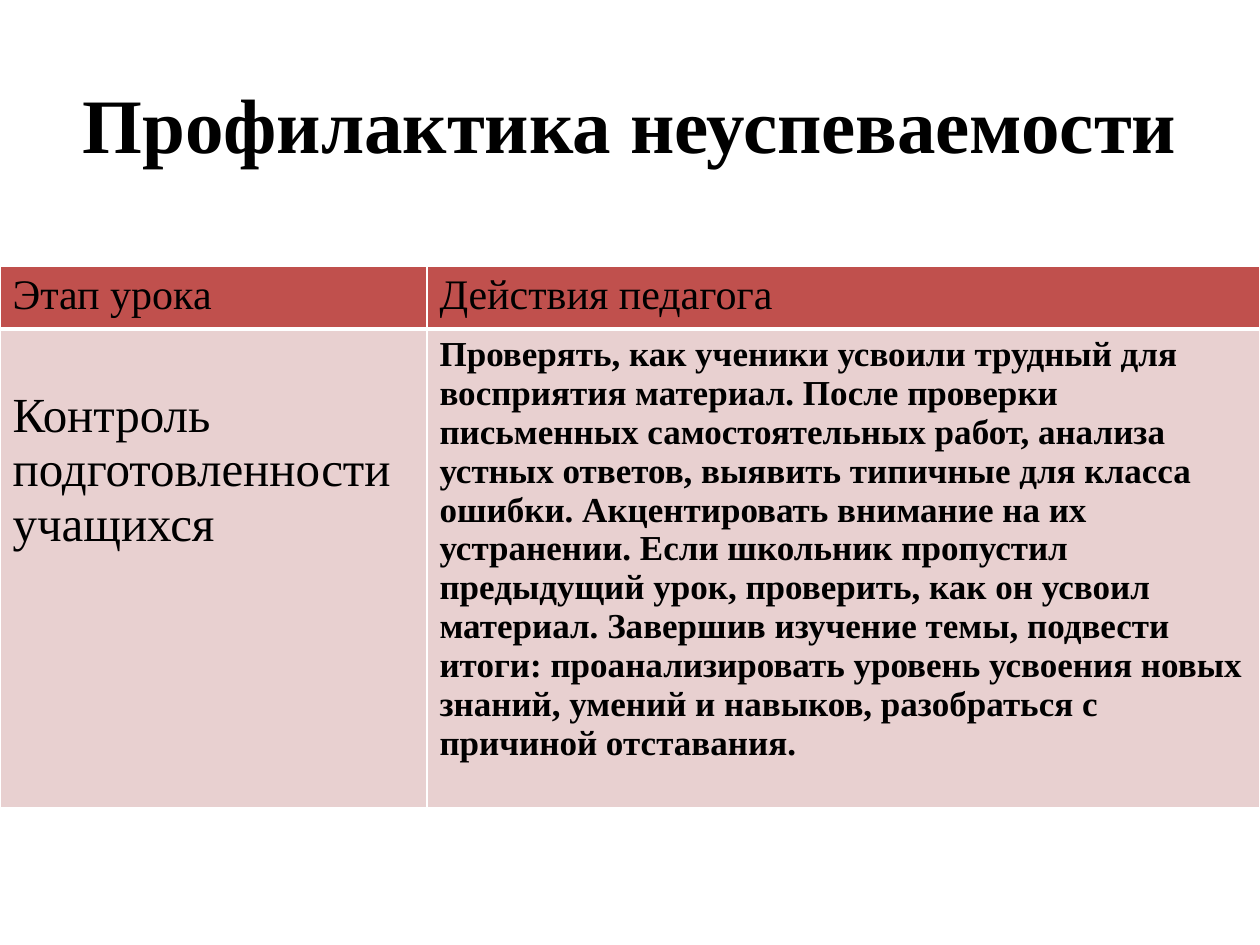
from lxml.etree import SubElement
from pptx import Presentation
from pptx.dml.color import RGBColor
from pptx.enum.text import MSO_ANCHOR, PP_ALIGN
from pptx.oxml.ns import qn
from pptx.util import Emu, Pt

FONT = "Times New Roman"
BLACK = RGBColor(0x00, 0x00, 0x00)
WHITE = RGBColor(0xFF, 0xFF, 0xFF)
RED = RGBColor(0xC0, 0x50, 0x4D)
PINK = RGBColor(0xE8, 0xD0, 0xD0)

HEADERS = ("Этап урока", "Действия педагога")
STAGE = "Контроль подготовленности учащихся"
ACTIONS = (
    "Проверять, как ученики усвоили трудный для восприятия материал. "
    "После проверки письменных самостоятельных работ, анализа устных ответов, "
    "выявить типичные для класса ошибки. Акцентировать внимание на их устранении. "
    "Если школьник пропустил предыдущий урок, проверить, как он усвоил материал. "
    "Завершив изучение темы, подвести итоги: проанализировать уровень усвоения "
    "новых знаний, умений и навыков, разобраться с причиной отставания."
)


def px(length):
    return Emu(round(length * 914400 / 126))


def add_run(paragraph, text, size, bold=False):
    run = paragraph.add_run()
    run.text = text
    run.font.name = FONT
    run.font.size = Pt(size)
    run.font.bold = bold
    run.font.color.rgb = BLACK


def set_borders(cell, bottom_width):
    """Draw white 1 pt borders, with a bottom border of the given width in points."""
    properties = cell._tc.get_or_add_tcPr()
    for side, width in (("L", 1), ("R", 1), ("T", 1), ("B", bottom_width)):
        line = SubElement(properties, qn(f"a:ln{side}"), w=str(Pt(width)))
        fill = SubElement(line, qn("a:solidFill"))
        SubElement(fill, qn("a:srgbClr"), val=str(WHITE))


def fill_cell(cell, text, size, color, bold=False, bottom_width=1):
    set_borders(cell, bottom_width)
    cell.fill.solid()
    cell.fill.fore_color.rgb = color
    add_run(cell.text_frame.paragraphs[0], text, size, bold)


def add_title(slide, left, top, width, height):
    shape = slide.shapes.add_textbox(px(left), px(top), px(width), px(height))
    frame = shape.text_frame
    frame.word_wrap = True
    frame.vertical_anchor = MSO_ANCHOR.MIDDLE
    paragraph = frame.paragraphs[0]
    paragraph.alignment = PP_ALIGN.CENTER
    add_run(paragraph, "Профилактика неуспеваемости", 44, bold=True)


def add_lesson_table(slide, left, top, width, height):
    stage_width, header_height = 427, 63
    table = slide.shapes.add_table(
        2, 2, px(left), px(top), px(width), px(height)
    ).table
    table.columns[0].width = px(stage_width)
    table.columns[1].width = px(width - stage_width)
    table.rows[0].height = px(header_height)
    table.rows[1].height = px(height - header_height)

    for column, header in enumerate(HEADERS):
        fill_cell(table.cell(0, column), header, 24, RED, bottom_width=3)
    stage_cell = table.cell(1, 0)
    fill_cell(stage_cell, STAGE, 28, PINK)
    stage_cell.margin_top = px(60)
    fill_cell(table.cell(1, 1), ACTIONS, 20, PINK, bold=True)


def main():
    presentation = Presentation()
    presentation.slide_width = px(1260)
    presentation.slide_height = px(945)
    slide = presentation.slides.add_slide(presentation.slide_layouts[6])
    slide.background.fill.solid()
    slide.background.fill.fore_color.rgb = WHITE
    add_title(slide, 63, 38, 1134, 169)
    add_lesson_table(slide, 0, 266, 1260, 542)
    presentation.save("out.pptx")


if __name__ == "__main__":
    main()
